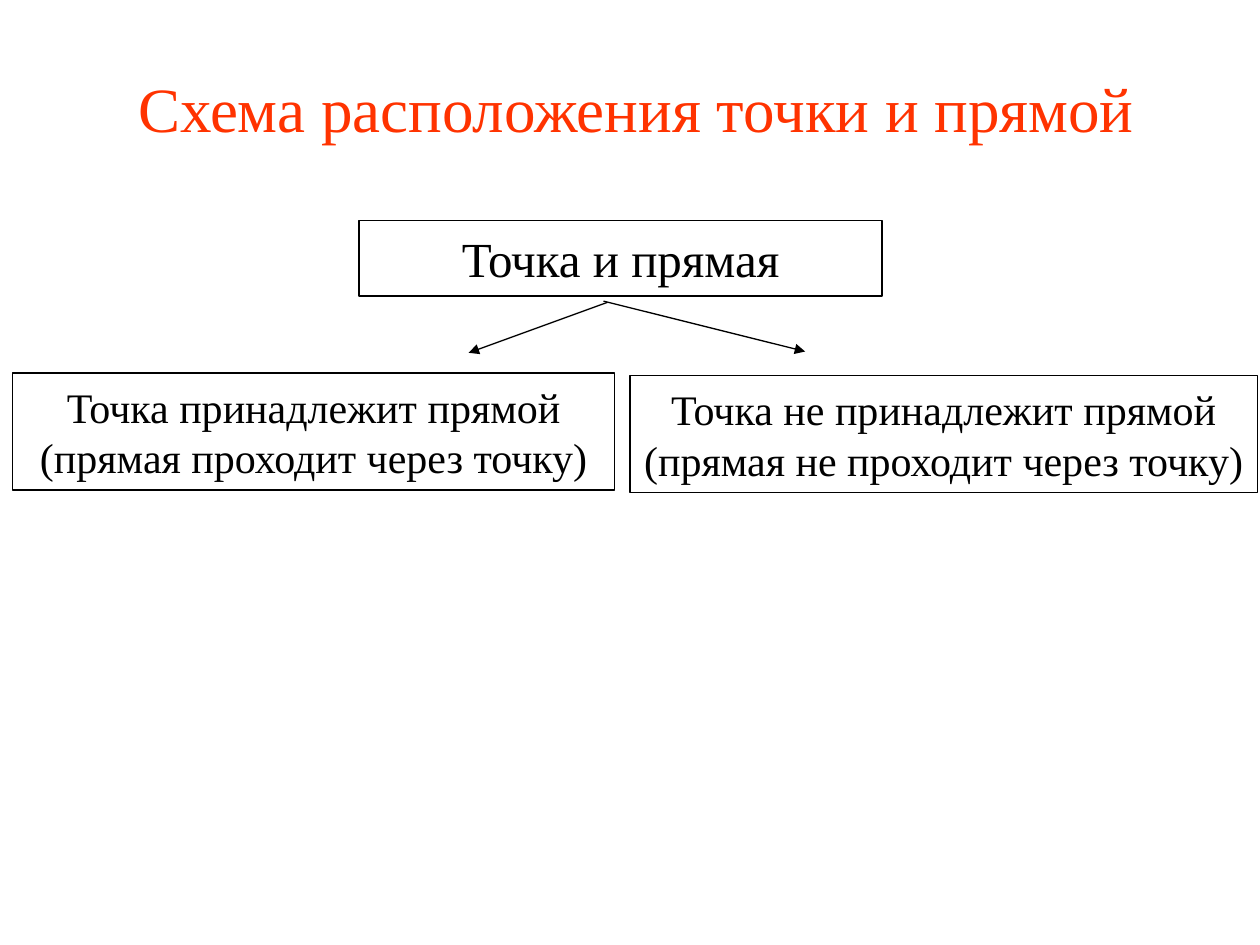
from lxml import etree
from pptx import Presentation
from pptx.dml.color import RGBColor
from pptx.enum.shapes import MSO_CONNECTOR, MSO_SHAPE
from pptx.enum.text import MSO_ANCHOR, PP_ALIGN
from pptx.oxml.ns import qn
from pptx.util import Inches, Pt

RECTANGLE = MSO_SHAPE.RECTANGLE
STRAIGHT = MSO_CONNECTOR.STRAIGHT
MIDDLE = MSO_ANCHOR.MIDDLE
CENTER = PP_ALIGN.CENTER

FONT = "Times New Roman"
COLORS = {name: RGBColor.from_string(code) for name, code in {
    "title": "FF3300", "ink": "000000", "paper": "FFFFFF"}.items()}

deck = Presentation()
deck.slide_width, deck.slide_height = Inches(10), Inches(7.5)
# The slide is a grid of 100 columns by 75 rows
COLUMN, ROW = deck.slide_width / 100, deck.slide_height / 75
page = deck.slides.add_slide(deck.slide_layouts[5])


def grid(column, row):
    return round(column * COLUMN), round(row * ROW)


def write(box, lines, size, color):
    frame = box.text_frame
    frame.word_wrap = True
    frame.vertical_anchor = MIDDLE
    frame.text = "\n".join(lines)
    for para in frame.paragraphs:
        para.alignment = CENTER
        para.font.name = FONT
        para.font.size = Pt(size)
        para.font.color.rgb = COLORS[color]


# Title
title = page.shapes.title
title.left, title.top = grid(8, 6)
title.width, title.height = grid(85, 5)
write(title, ["Схема расположения точки и прямой"], 36, "title")

# Boxes: the root and its two cases
boxes = [
    ((50, 29.8), (49.8, 9.3), 24,
     ["Точка не принадлежит прямой", "(прямая не проходит через точку)"]),
    ((1, 29.6), (47.8, 9.3), 24,
     ["Точка принадлежит прямой", "(прямая проходит через точку)"]),
    ((28.5, 17.5), (41.5, 6), 28, ["Точка и прямая"]),
]
for corner, extent, size, lines in boxes:
    box = page.shapes.add_shape(RECTANGLE, *grid(*corner), *grid(*extent))
    box.shadow.inherit = False
    box.fill.solid()
    box.fill.fore_color.rgb = COLORS["paper"]
    box.line.color.rgb = COLORS["ink"]
    box.line.width = Pt(0.75)
    write(box, lines, size, "ink")

# Arrows from the root towards each case
for start, end in [((48.2, 24), (37.2, 28)), ((47.9, 23.9), (63.9, 27.9))]:
    arrow = page.shapes.add_connector(STRAIGHT, *grid(*start), *grid(*end))
    arrow.line.color.rgb = COLORS["ink"]
    arrow.line.width = Pt(0.75)
    etree.SubElement(arrow.line._get_or_add_ln(), qn("a:tailEnd"), type="triangle")
    etree.SubElement(arrow._element.spPr, qn("a:effectLst"))

deck.save("out.pptx")
